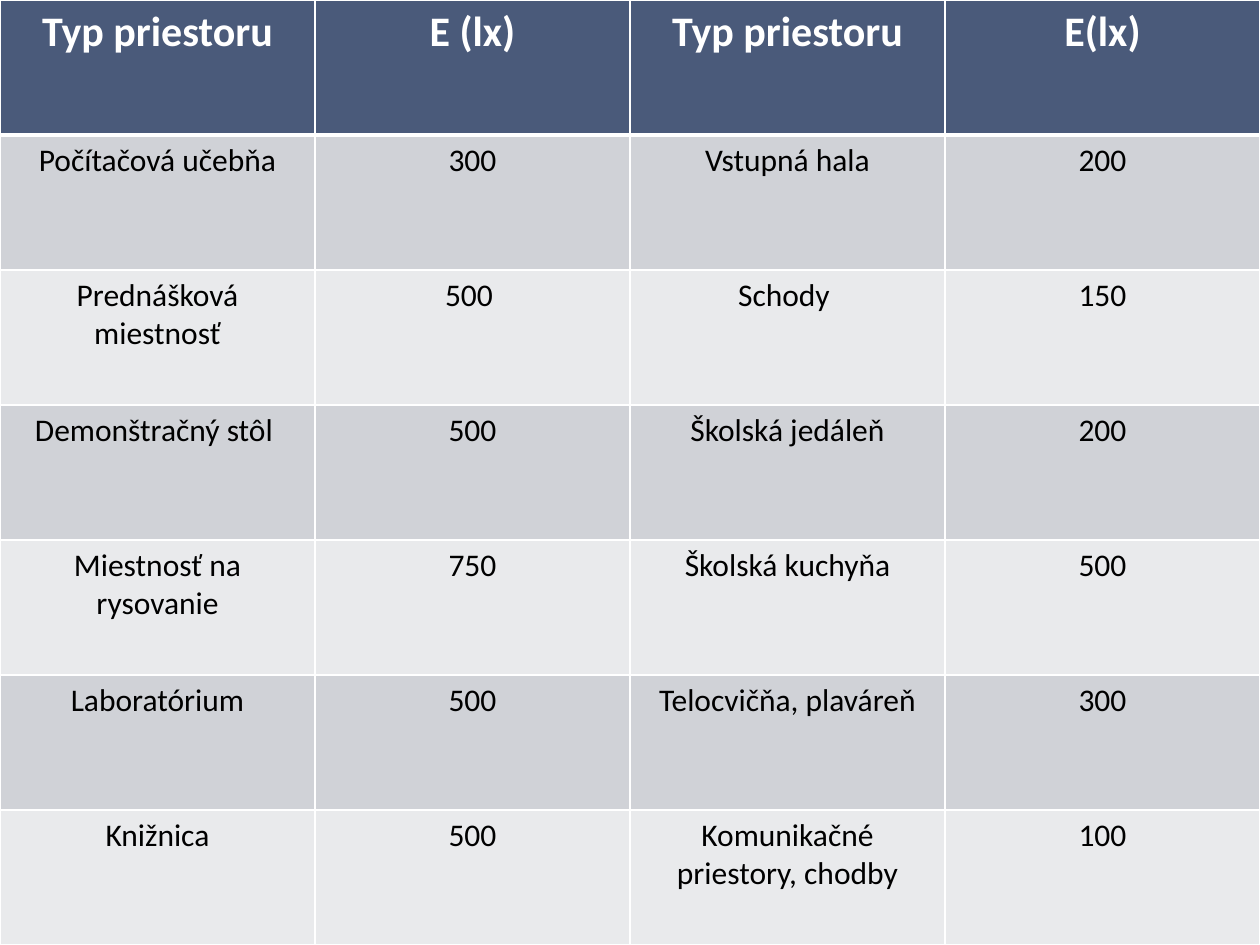
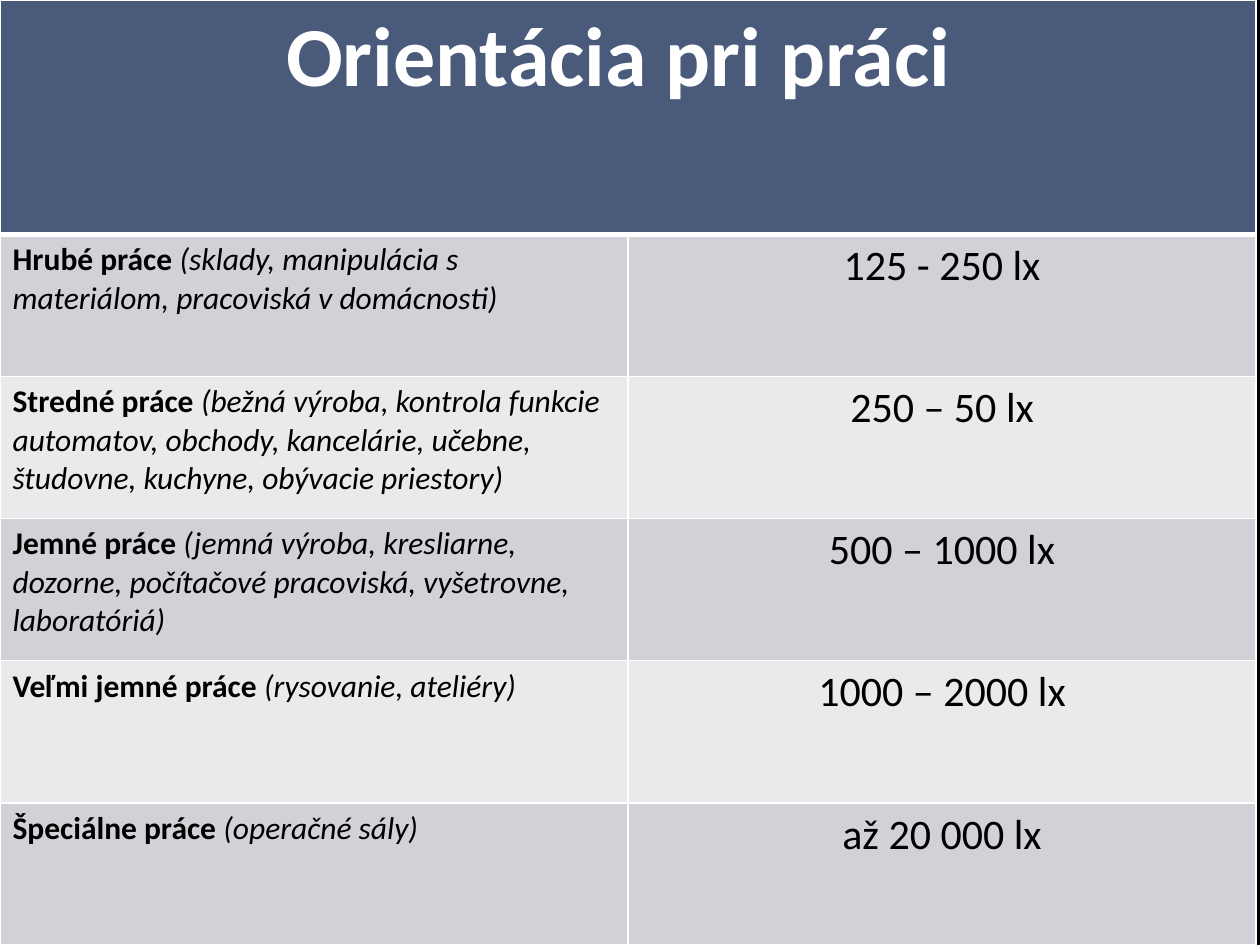
from dataclasses import dataclass
from typing import NamedTuple

from lxml.etree import SubElement
from pptx import Presentation
from pptx.dml.color import RGBColor
from pptx.enum.text import PP_ALIGN as Align
from pptx.oxml.ns import qn
from pptx.util import Inches, Pt


@dataclass(frozen=True)
class Theme:
    font: str = "Calibri"
    background: str = "000000"
    header: str = "4A5A7A"
    bands: tuple[str, str] = ("D0D2D7", "E9EAEC")
    light_text: str = "FFFFFF"
    dark_text: str = "000000"
    border: str = "FFFFFF"
    thin: float = 1
    thick: float = 3
    body: float = 18
    heading: float = 24
    title: float = 48


class Run(NamedTuple):
    text: str
    bold: bool = False
    italic: bool = False


@dataclass(frozen=True)
class Column:
    size: float
    align: Align = Align.CENTER


@dataclass(frozen=True)
class TableSpec:
    width: float
    header_height: float
    header_size: float
    header: list[str]
    columns: list[Column]
    rows: list[list[list[Run]]]


THEME = Theme()
WIDTH, HEIGHT = 10, 7.5

ROOMS = [
    ("Počítačová učebňa", "300", "Vstupná hala", "200"),
    ("Prednášková miestnosť", "500 ", "Schody ", "150"),
    ("Demonštračný stôl ", "500", "Školská jedáleň", "200"),
    ("Miestnosť na rysovanie", "750", "Školská kuchyňa", "500"),
    ("Laboratórium", "500", "Telocvičňa, plaváreň", "300"),
    ("Knižnica", "500", "Komunikačné priestory, chodby", "100"),
]

WORK_TYPES = [
    ("Hrubé práce ", "(sklady, manipulácia s materiálom, pracoviská v domácnosti)",
     "125 - 250 lx"),
    ("Stredné práce ",
     "(bežná výroba, kontrola funkcie automatov, obchody, kancelárie, učebne, "
     "študovne, kuchyne, obývacie priestory)", "250 – 50 lx"),
    ("Jemné práce ",
     "(jemná výroba, kresliarne, dozorne, počítačové pracoviská, vyšetrovne, "
     "laboratóriá)", "500 – 1000 lx"),
    ("Veľmi jemné práce ", "(rysovanie, ateliéry)", "1000 – 2000 lx"),
    ("Špeciálne práce ", "(operačné sály)", "až 20 000 lx"),
]

ROOM_TABLE = TableSpec(
    width=WIDTH,
    header_height=HEIGHT / (len(ROOMS) + 1),
    header_size=THEME.heading,
    header=["Typ priestoru", "E (lx)", "Typ priestoru", "E(lx)"],
    columns=[Column(THEME.body)] * 4,
    rows=[[[Run(text)] for text in room] for room in ROOMS],
)

WORK_TABLE = TableSpec(
    width=9.97,
    header_height=1.86,
    header_size=THEME.title,
    header=["Orientácia pri práci "],
    columns=[Column(THEME.body, Align.LEFT), Column(THEME.heading)],
    rows=[[[Run(name, bold=True), Run(examples, italic=True)], [Run(value)]]
          for name, examples, value in WORK_TYPES],
)


def write_text(cell, runs: list[Run], *, size: float, color: str, align: Align) -> None:
    paragraph = cell.text_frame.paragraphs[0]
    paragraph.alignment = align
    for item in runs:
        run = paragraph.add_run()
        run.text = item.text
        run.font.name = THEME.font
        run.font.size = Pt(size)
        run.font.bold = item.bold
        run.font.italic = item.italic
        run.font.color.rgb = RGBColor.from_string(color)


def style_cell(cell, fill: str, *, top: float, bottom: float) -> None:
    properties = cell._tc.get_or_add_tcPr()
    widths = {"lnL": THEME.thin, "lnR": THEME.thin, "lnT": top, "lnB": bottom}
    for side, width in widths.items():
        line = SubElement(properties, qn(f"a:{side}"), w=str(Pt(width)))
        solid = SubElement(line, qn("a:solidFill"))
        SubElement(solid, qn("a:srgbClr"), val=THEME.border)
    cell.fill.solid()
    cell.fill.fore_color.rgb = RGBColor.from_string(fill)


def draw_table(slide, spec: TableSpec) -> None:
    row_count, column_count = len(spec.rows) + 1, len(spec.columns)
    table = slide.shapes.add_table(
        row_count, column_count, Inches(0), Inches(0), Inches(spec.width), Inches(HEIGHT)
    ).table
    body_height = (HEIGHT - spec.header_height) / len(spec.rows)
    for column in table.columns:
        column.width = Inches(spec.width / column_count)
    for index, row in enumerate(table.rows):
        row.height = Inches(body_height if index else spec.header_height)
        fill = THEME.bands[(index - 1) % 2] if index else THEME.header
        for cell in row.cells:
            style_cell(cell, fill,
                       top=THEME.thick if index == 1 else THEME.thin,
                       bottom=THEME.thin if index else THEME.thick)
    if len(spec.header) == 1:
        table.cell(0, 0).merge(table.cell(0, column_count - 1))
    for index, text in enumerate(spec.header):
        write_text(table.cell(0, index), [Run(text, bold=True)], size=spec.header_size,
                   color=THEME.light_text, align=Align.CENTER)
    for row_index, row in enumerate(spec.rows, start=1):
        for column_index, (runs, column) in enumerate(zip(row, spec.columns)):
            write_text(table.cell(row_index, column_index), runs, size=column.size,
                       color=THEME.dark_text, align=column.align)


def main() -> None:
    presentation = Presentation()
    presentation.slide_width = Inches(WIDTH)
    presentation.slide_height = Inches(HEIGHT)
    for spec in (ROOM_TABLE, WORK_TABLE):
        slide = presentation.slides.add_slide(presentation.slide_layouts[6])
        slide.background.fill.solid()
        slide.background.fill.fore_color.rgb = RGBColor.from_string(THEME.background)
        draw_table(slide, spec)
    presentation.save("out.pptx")


if __name__ == "__main__":
    main()
